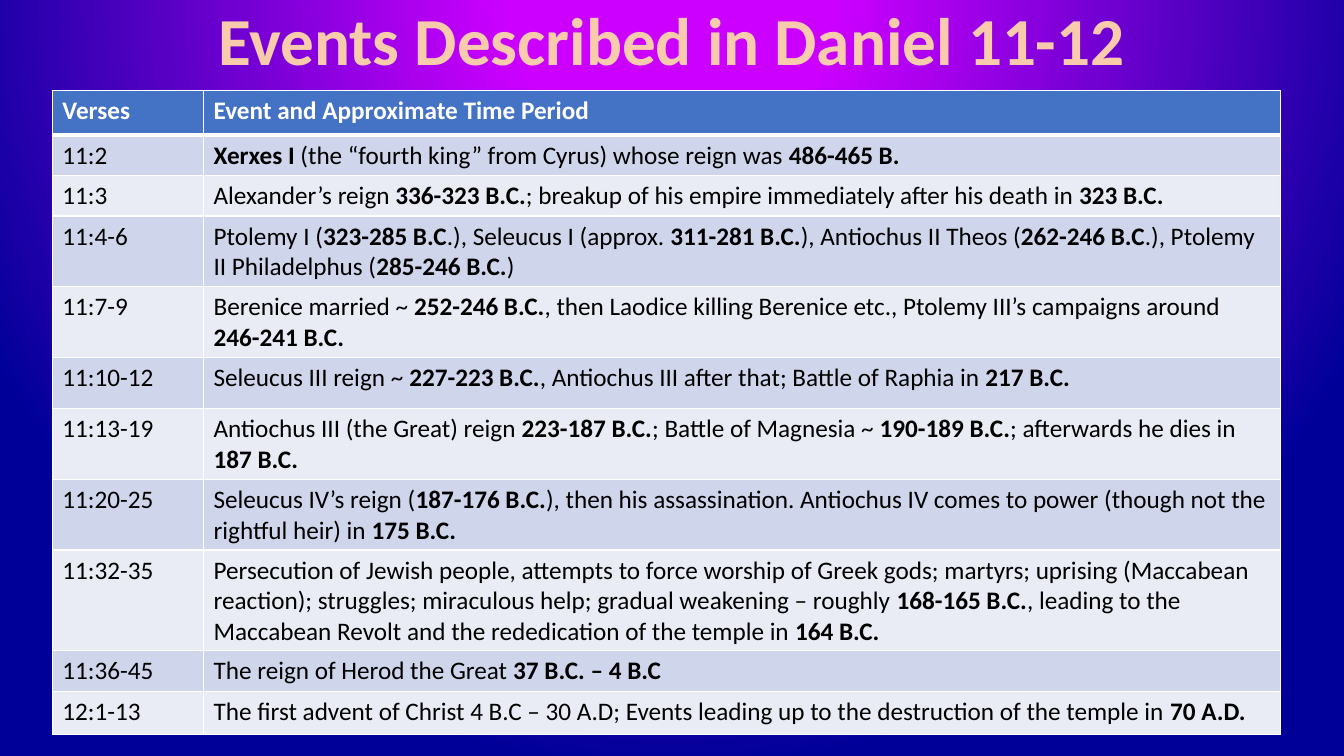
from lxml.etree import SubElement
from pptx import Presentation
from pptx.dml.color import RGBColor
from pptx.enum.text import MSO_ANCHOR, PP_ALIGN
from pptx.oxml import parse_xml
from pptx.oxml.ns import nsdecls, qn
from pptx.util import Cm, Pt

FONT = "Calibri"
MAGENTA = RGBColor(0xCC, 0x00, 0xFF)
NAVY = RGBColor(0x00, 0x00, 0x99)
PEACH = RGBColor(0xF8, 0xCB, 0xAD)
HEADER_BLUE = RGBColor(0x44, 0x72, 0xC4)
BAND_DARK = RGBColor(0xCF, 0xD5, 0xEA)
BAND_LIGHT = RGBColor(0xE9, 0xEB, 0xF5)
WHITE = RGBColor(0xFF, 0xFF, 0xFF)
BLACK = RGBColor(0x00, 0x00, 0x00)

VERSES_WIDTH = 3.81
HEADER = ("Verses", "Event and Approximate Time Period")
HEADER_HEIGHT = 1.12
# Verses, event (** marks bold), row height in cm
EVENTS = [
    ("11:2", "**Xerxes I** (the “fourth king” from Cyrus) whose reign was **486-465 B.**", 0.99),
    ("11:3", "Alexander’s reign **336-323 B.C.**; breakup of his empire immediately "
             "after his death in **323 B.C.**", 0.99),
    ("11:4-6", "Ptolemy I (**323-285 B.C**.), Seleucus I (approx. **311-281 B.C.**), "
               "Antiochus II Theos (**262-246 B.C**.), Ptolemy II Philadelphus "
               "(**285-246 B.C.**)", 1.73),
    ("11:7-9", "Berenice married ~ **252-246 B.C.**, then Laodice killing Berenice etc., "
               "Ptolemy III’s campaigns around **246-241 B.C.**", 1.73),
    ("11:10-12", "Seleucus III reign ~ **227-223 B.C.**, Antiochus III after that; "
                 "Battle of Raphia in **217 B.C.**", 1.3),
    ("11:13-19", "Antiochus III (the Great) reign **223-187 B.C.**; Battle of Magnesia ~ "
                 "**190-189 B.C.**; afterwards he dies in **187 B.C.**", 1.73),
    ("11:20-25", "Seleucus IV’s reign (**187-176 B.C.**), then his assassination. Antiochus IV "
                 "comes to power (though not the rightful heir) in **175 B.C.**", 1.73),
    ("11:32-35", "Persecution of Jewish people, attempts to force worship of Greek gods; "
                 "martyrs; uprising (Maccabean reaction); struggles; miraculous help; "
                 "gradual weakening – roughly **168-165 B.C.**, leading to the Maccabean "
                 "Revolt and the rededication of the temple in **164 B.C.**", 2.46),
    ("11:36-45", "The reign of Herod the Great **37 B.C. – 4 B.C**", 0.99),
    ("12:1-13", "The first advent of Christ 4 B.C – 30 A.D; Events leading up to the "
                "destruction of the temple in **70 A.D.**", 1.09),
]


def paint_background(s):
    """Fill the slide with a circular gradient centred above its top edge."""
    s.background.fill.solid()
    solid = s.element.find(".//" + qn("p:bgPr")).find(qn("a:solidFill"))
    stops = "".join(
        f'<a:gs pos="{pos}"><a:srgbClr val="{color}"/></a:gs>'
        for pos, color in ((0, MAGENTA), (21000, MAGENTA), (100000, NAVY)))
    gradient = parse_xml(
        f'<a:gradFill {nsdecls("a")} rotWithShape="1"><a:gsLst>{stops}</a:gsLst>'
        '<a:path path="circle">'
        '<a:fillToRect l="50000" t="-80000" r="50000" b="180000"/>'
        '</a:path></a:gradFill>')
    solid.getparent().replace(solid, gradient)


def format_run(r, size, color, bold):
    r.font.name = FONT
    r.font.size = Pt(size)
    r.font.color.rgb = color
    r.font.bold = bold


def add_title(s, left, top, width, height):
    tf = s.shapes.add_textbox(Cm(left), Cm(top), Cm(width), Cm(height)).text_frame
    tf.word_wrap = True
    tf.vertical_anchor = MSO_ANCHOR.MIDDLE
    tf.text = "Events Described in Daniel 11-12"
    p = tf.paragraphs[0]
    p.alignment = PP_ALIGN.CENTER
    p.line_spacing = 0.9
    format_run(p.runs[0], 48, PEACH, True)


def set_borders(cell, top=1, bottom=1):
    tc_pr = cell._tc.get_or_add_tcPr()
    for side, width in (("L", 1), ("R", 1), ("T", top), ("B", bottom)):
        ln = SubElement(tc_pr, qn(f"a:ln{side}"), w=str(Pt(width)))
        SubElement(SubElement(ln, qn("a:solidFill")), qn("a:srgbClr"), val=str(WHITE))


def fill_cell(cell, text, fill, color):
    """Write text into the cell, with the parts between ** marks in bold."""
    cell.fill.solid()
    cell.fill.fore_color.rgb = fill
    p = cell.text_frame.paragraphs[0]
    for i, part in enumerate(text.split("**")):
        if part:
            r = p.add_run()
            r.text = part
            format_run(r, 18, color, i % 2 == 1)


def add_events_table(s, left, top, width):
    heights = [HEADER_HEIGHT] + [height for _, _, height in EVENTS]
    table = s.shapes.add_table(len(heights), 2, Cm(left), Cm(top),
                               Cm(width), Cm(sum(heights))).table
    table.columns[0].width = Cm(VERSES_WIDTH)
    table.columns[1].width = Cm(width - VERSES_WIDTH)
    for row, height in zip(table.rows, heights):
        row.height = Cm(height)

    for col, text in enumerate(HEADER):
        cell = table.cell(0, col)
        set_borders(cell, bottom=3)
        fill_cell(cell, f"**{text}**", HEADER_BLUE, WHITE)
    for row, (verses, event, _) in enumerate(EVENTS, start=1):
        band = BAND_DARK if row % 2 else BAND_LIGHT
        for col, text in enumerate((verses, event)):
            cell = table.cell(row, col)
            set_borders(cell, top=3 if row == 1 else 1)
            fill_cell(cell, text, band, BLACK)


def main():
    prs = Presentation()
    prs.slide_width, prs.slide_height = Cm(33.87), Cm(19.05)
    s = prs.slides.add_slide(prs.slide_layouts[6])
    paint_background(s)
    add_title(s, 0, 0.05, 33.87, 2.13)
    add_events_table(s, 1.32, 2.29, 30.94)
    prs.save("out.pptx")


if __name__ == "__main__":
    main()
